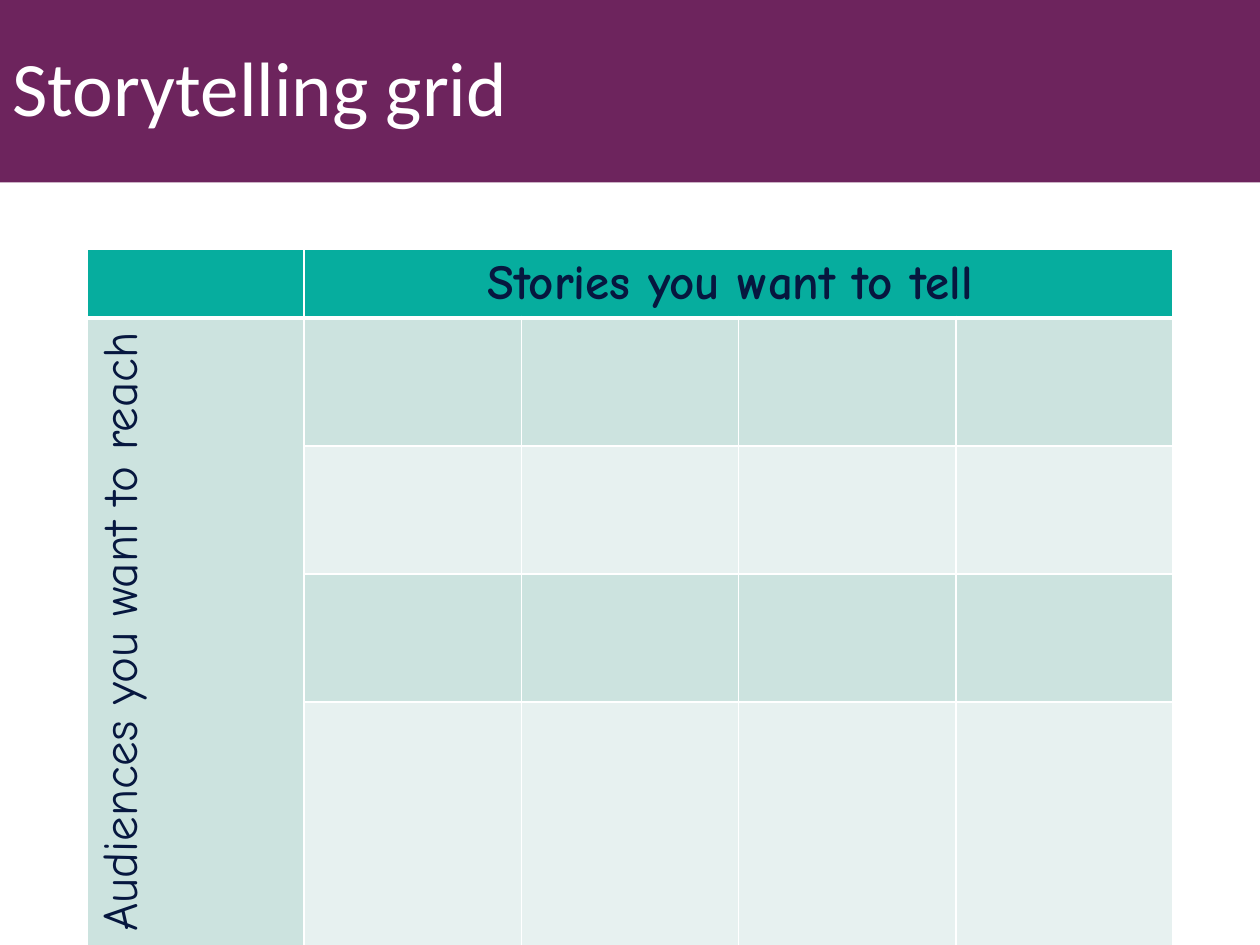
from lxml.etree import SubElement
from pptx import Presentation
from pptx.dml.color import RGBColor as Rgb
from pptx.enum.shapes import MSO_SHAPE as Kind
from pptx.enum.text import MSO_ANCHOR as Anchor, PP_ALIGN as Align
from pptx.oxml.ns import qn
from pptx.util import Cm, Pt


def hue(code):
    return Rgb.from_string(code)


def write(frame, text, font="Comic Neue", size=28, color="06173F",
          bold=False, align=Align.CENTER, space=None):
    para = frame.paragraphs[0]
    para.alignment = align
    para.line_spacing = space
    run = para.add_run()
    run.text = text
    run.font.name, run.font.size, run.font.bold = font, Pt(size), bold
    run.font.color.rgb = hue(color)


class Deck:
    """Holds the style and the current slide."""
    plum, teal, white = "6D245D", "06AD9E", "FFFFFF"
    bands = "CCE3DF", "E7F1F0"

    def __init__(self, wide, high):
        self.show = Presentation()
        self.show.slide_width, self.show.slide_height = Cm(wide), Cm(high)
        self.slide = self.show.slides.add_slide(self.show.slide_layouts[6])

    def title(self, text, wide, high):
        bar = self.slide.shapes.add_shape(Kind.RECTANGLE, 0, 0, Cm(wide), Cm(high))
        bar.shadow.inherit = False
        bar.fill.solid()
        bar.fill.fore_color.rgb = hue(self.plum)
        bar.line.fill.background()
        bar.text_frame.word_wrap = True
        bar.text_frame.vertical_anchor = Anchor.MIDDLE
        write(bar.text_frame, text, font="Calibri", size=44, color=self.white,
              align=Align.LEFT, space=0.9)

    def edge(self, cell, **widths):
        props = cell._tc.get_or_add_tcPr()
        for side, width in widths.items():
            line = SubElement(props, qn(f"a:ln{side}"), w=str(Pt(width)))
            fill = SubElement(line, qn("a:solidFill"))
            SubElement(fill, qn("a:srgbClr"), val=self.white)

    def grid(self, left, top, col, rows, cols):
        frame = self.slide.shapes.add_table(
            len(rows), cols, Cm(left), Cm(top), Cm(col * cols), Cm(sum(rows)))
        table = frame.table
        table.first_row = table.horz_banding = False
        for item in table.columns:
            item.width = Cm(col)
        for r, high in enumerate(rows):
            table.rows[r].height = Cm(high)
            for c in range(cols):
                cell = table.cell(r, c)
                self.edge(cell, L=1, R=1, T=3 if r == 1 else 1, B=1 if r else 3)
                cell.fill.solid()
                tint = self.bands[0 if c == 0 else (r - 1) % 2] if r else self.teal
                cell.fill.fore_color.rgb = hue(tint)
        return table

    def span(self, table, start, end, text, bold=False, turn=None):
        cell = table.cell(*start)
        cell.merge(table.cell(*end))
        write(cell.text_frame, text, bold=bold)
        if turn:
            cell._tc.get_or_add_tcPr().set("vert", turn)


def main():
    deck = Deck(25.4, 19.05)
    deck.title("Storytelling grid", 25.4, 3.68)
    table = deck.grid(1.75, 5.02, 4.38, [1.38] + [2.58] * 3 + [4.91], 5)
    deck.span(table, (0, 1), (0, 4), "Stories you want to tell ", bold=True)
    deck.span(table, (1, 0), (4, 0), "Audiences you want to reach ", turn="vert270")
    deck.show.save("out.pptx")


if __name__ == "__main__":
    main()
